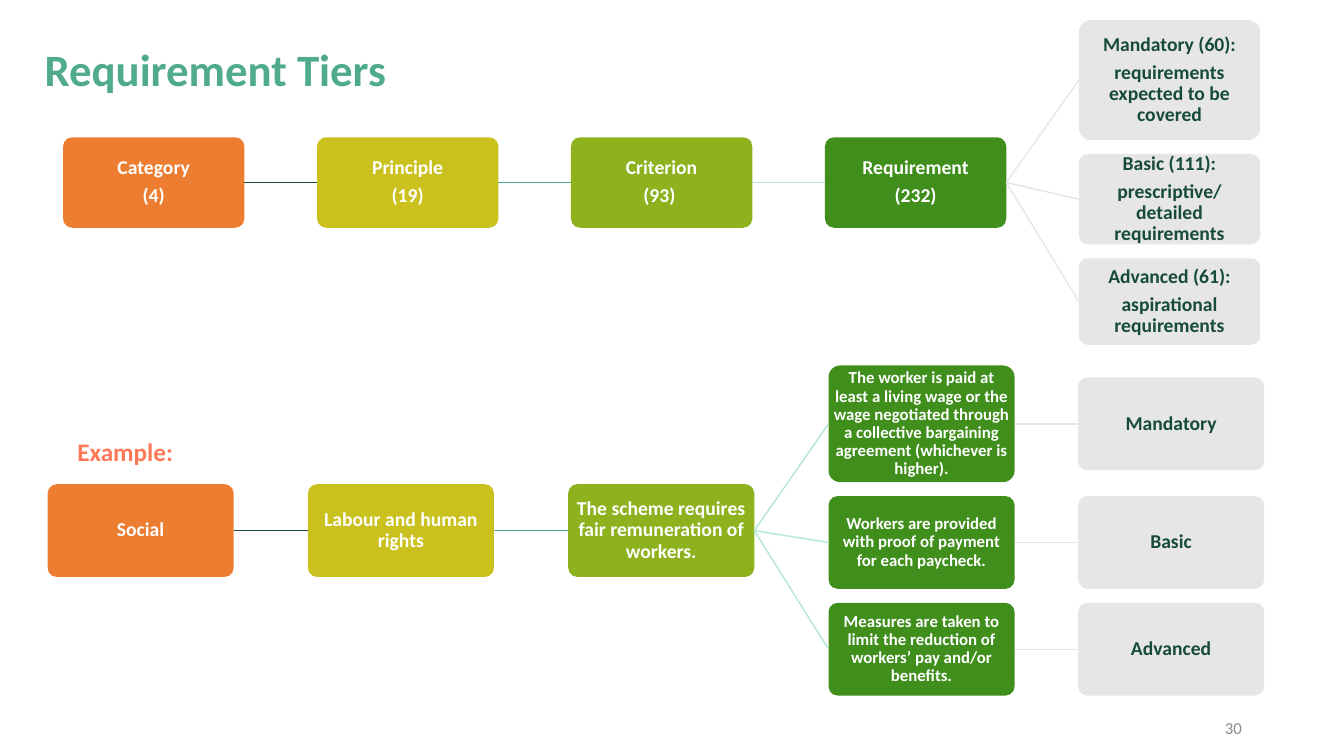
from lxml.etree import SubElement
from pptx import Presentation
from pptx.dml.color import RGBColor
from pptx.enum.shapes import MSO_CONNECTOR, MSO_SHAPE
from pptx.enum.text import MSO_ANCHOR, PP_ALIGN
from pptx.oxml.ns import qn
from pptx.util import Cm, Pt

COLOURS = {
    "orange": "ED7D31", "yellow": "CBC11E", "lime": "8EB21E", "green": "408E1C",
    "grey": "E7E6E6", "dark": "164A3A", "teal": "50AB8E", "mint": "B3E6D6",
    "coral": "FF7857", "number": "8C8C8C", "white": "FFFFFF",
}
LEVEL_FILLS = ["orange", "yellow", "lime", "green", "grey"]
LINK_COLOURS = ["dark", "teal", "mint", "grey"]  # link leaving each level
STACK_GAP = 0.35

# Text boxes: text, (left, top, width, height) in cm, size, colour, bold, alignment
LABELS = [
    ("Example:", (1.7, 10.87, 3.0, 1.03), 18, "coral", True, PP_ALIGN.LEFT),
    ("30", (23.93, 17.96, 7.62, 1.02), 12, "number", False, PP_ALIGN.RIGHT),
]

TIERS = {
    "lefts": [1.59 + 6.4 * level for level in range(5)],
    "width": 4.57, "height": 2.28, "middle": 4.6,
    "chain": [["Category", "(4)"], ["Principle", "(19)"],
              ["Criterion", "(93) "], ["Requirement", "(232)"]],
}
TIER_BRANCHES = [  # paragraphs, height
    (["Mandatory (60):", "requirements expected to be covered"], 3.02),
    (["Basic (111):", "prescriptive/ detailed requirements"], 2.28),
    (["Advanced (61):", "aspirational requirements"], 2.18),
]

EXAMPLE = {
    "lefts": [1.2 + 6.56 * level for level in range(4)] + [27.17],
    "width": 4.69, "height": 2.34, "middle": 13.37,
    "chain": [["Social"], ["Labour and human rights"],
              ["The scheme requires fair remuneration of workers."]],
}
EXAMPLE_BRANCHES = [  # paragraphs, height
    (["The worker is paid at least a living wage or the wage negotiated through "
      "a collective bargaining agreement (whichever is higher)."], 2.94),
    (["Workers are provided with proof of payment for each paycheck."], 2.34),
    (["Measures are taken to limit the reduction of workers’ pay and/or benefits."], 2.34),
]
EXAMPLE_TIERS = ["Mandatory", "Basic", "Advanced"]


def colour(name):
    return RGBColor.from_string(COLOURS[name])


def set_font(para, size, name, bold):
    para.font.name = "Calibri"
    para.font.size = Pt(size)
    para.font.bold = bold
    para.font.color.rgb = colour(name)


def add_box(page, row, level, paragraphs, middle, height, size=14):
    box = page.shapes.add_shape(
        MSO_SHAPE.ROUNDED_RECTANGLE, Cm(row["lefts"][level]), Cm(middle - height / 2),
        Cm(row["width"]), Cm(height))
    box.adjustments[0] = 0.1
    box.shadow.inherit = False
    box.fill.solid()
    box.fill.fore_color.rgb = colour(LEVEL_FILLS[level])
    box.line.fill.background()
    frame = box.text_frame
    frame.word_wrap = True
    frame.vertical_anchor = MSO_ANCHOR.MIDDLE
    frame.margin_left = frame.margin_right = Cm(0.02)
    frame.margin_top = frame.margin_bottom = Cm(0.02)
    for index, text in enumerate(paragraphs):
        para = frame.add_paragraph() if index else frame.paragraphs[0]
        para.text = text
        para.alignment = PP_ALIGN.CENTER
        para.line_spacing = 0.9
        if index:
            para.space_before = Pt(5)
        set_font(para, size, "dark" if LEVEL_FILLS[level] == "grey" else "white", True)
    return box


def link(page, parent, child, level):
    line = page.shapes.add_connector(MSO_CONNECTOR.STRAIGHT, 0, 0, 0, 0)
    line.begin_connect(parent, 3)
    line.end_connect(child, 1)
    line.line.color.rgb = colour(LINK_COLOURS[level])
    line.line.width = Pt(1)
    SubElement(line._element.spPr, qn("a:effectLst"))


def add_chain(page, row):
    """Draw the linked boxes of a row and return the last one."""
    previous = None
    for level, paragraphs in enumerate(row["chain"]):
        box = add_box(page, row, level, paragraphs, row["middle"], row["height"])
        if previous:
            link(page, previous, box, level - 1)
        previous = box
    return previous


def add_branches(page, row, parent, branches, size):
    """Stack the branches around the row's middle; return (box, middle) pairs."""
    level = len(row["chain"])
    total = sum(height for _, height in branches) + STACK_GAP * (len(branches) - 1)
    top = row["middle"] - total / 2
    placed = []
    for paragraphs, height in branches:
        middle = top + height / 2
        box = add_box(page, row, level, paragraphs, middle, height, size)
        link(page, parent, box, level - 1)
        placed.append((box, middle))
        top += height + STACK_GAP
    return placed


def add_title(page, text):
    title = page.shapes.title
    title.left, title.top, title.width, title.height = Cm(0.87), Cm(0.02), Cm(33), Cm(3.58)
    title.text_frame.vertical_anchor = MSO_ANCHOR.MIDDLE
    para = title.text_frame.paragraphs[0]
    para.text = text
    para.alignment = PP_ALIGN.LEFT
    para.line_spacing = 0.9
    set_font(para, 32, "teal", True)


def main():
    deck = Presentation()
    deck.slide_width, deck.slide_height = Cm(33.87), Cm(19.05)
    page = deck.slides.add_slide(deck.slide_layouts[5])
    add_title(page, "Requirement Tiers")

    for text, place, size, name, bold, alignment in LABELS:
        frame = page.shapes.add_textbox(*map(Cm, place)).text_frame
        frame.word_wrap = True
        para = frame.paragraphs[0]
        para.text = text
        para.alignment = alignment
        set_font(para, size, name, bold)

    requirement = add_chain(page, TIERS)
    add_branches(page, TIERS, requirement, TIER_BRANCHES, 14)

    criterion = add_chain(page, EXAMPLE)
    placed = add_branches(page, EXAMPLE, criterion, EXAMPLE_BRANCHES, 12)
    for (box, middle), tier in zip(placed, EXAMPLE_TIERS):
        tier_box = add_box(page, EXAMPLE, 4, [tier], middle, EXAMPLE["height"])
        link(page, box, tier_box, 3)

    deck.save("out.pptx")


if __name__ == "__main__":
    main()
